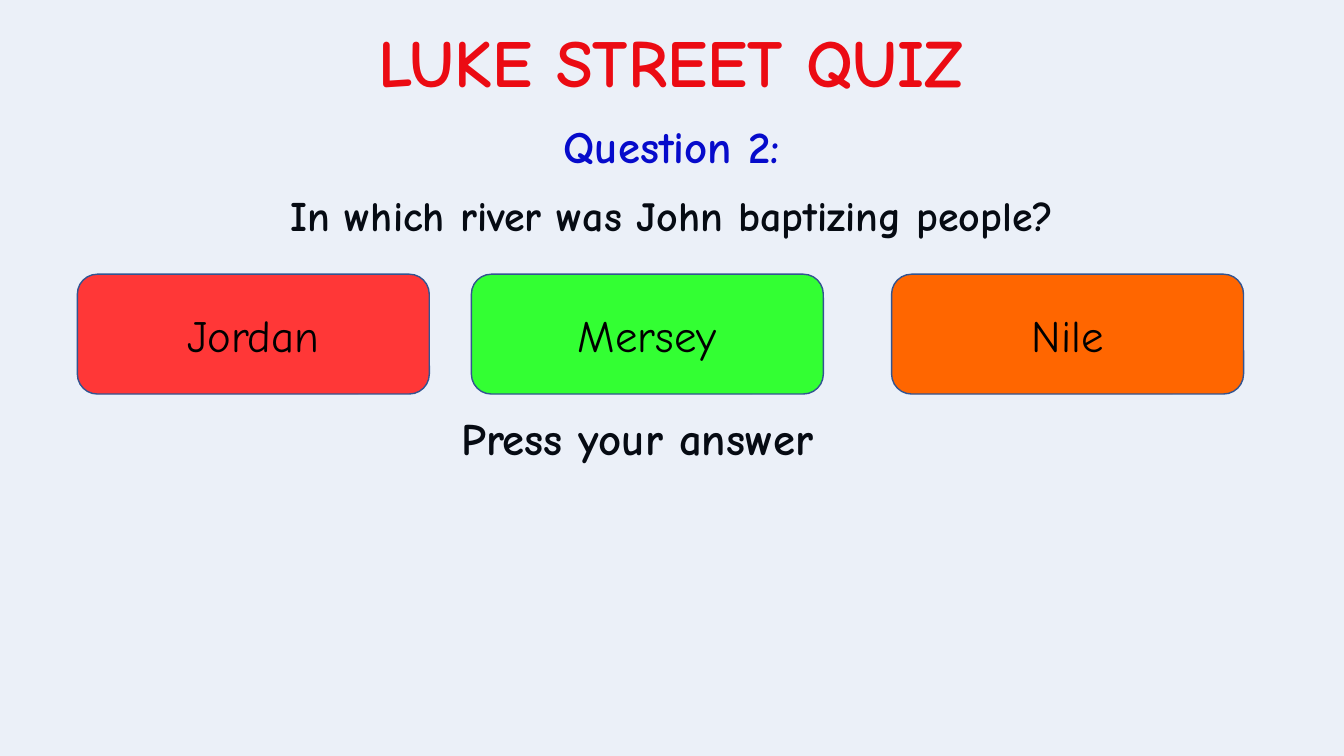
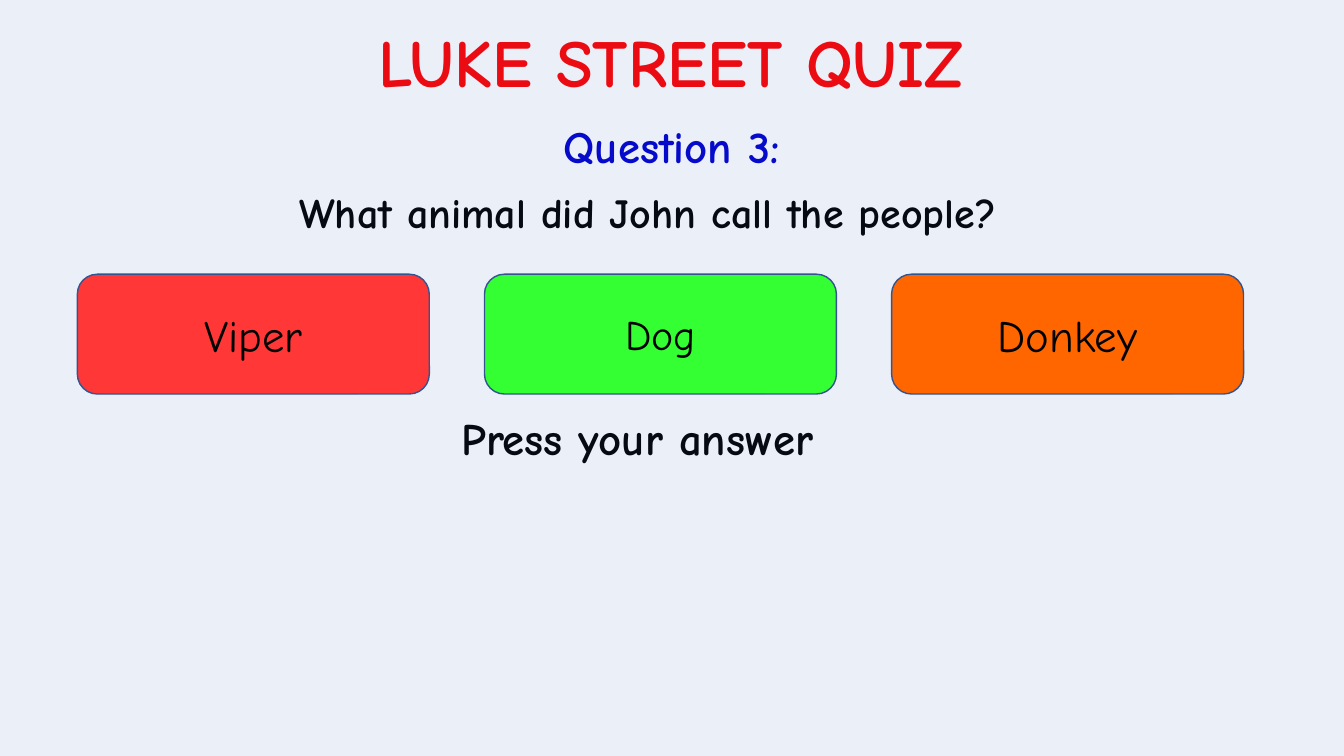
from lxml import etree
from pptx import Presentation
from pptx.dml.color import RGBColor
from pptx.enum.shapes import MSO_SHAPE as Shape
from pptx.enum.text import MSO_ANCHOR as Anchor, MSO_AUTO_SIZE as AutoSize, PP_ALIGN as Align
from pptx.oxml.ns import qn
from pptx.util import Cm, Pt

FONT = "Comic Neue"
BLACK = RGBColor(0, 0, 0)
TITLE_RED = RGBColor(0xFF, 0, 0)
LABEL_BLUE = RGBColor(0, 0, 0xCC)
WASH_BLUE = RGBColor(0x44, 0x72, 0xC4)
BORDER_BLUE = RGBColor(0x32, 0x54, 0x91)
ANSWER_FILLS = [
    RGBColor(0xFF, 0x37, 0x37),
    RGBColor(0x33, 0xFF, 0x33),
    RGBColor(0xFF, 0x66, 0),
]
WASH_OPACITY = 10

TITLE = "LUKE STREET QUIZ"
PROMPT = "Press your answer"
QUESTIONS = [
    {
        "label": "Question 2:",
        "question": "In which river was John baptizing people?",
        "box": (4.95, 4.5, 23.98, 3.02),
        "line_spacing": Pt(40),
        "answers": [("Jordan", 32), ("Mersey", 32), ("Nile", 32)],
        "middle_shift": -0.33,
    },
    {
        "label": "Question 3:",
        "question": "What animal did John call the people?",
        "box": (1.32, 4.78, 30.02, 1.83),
        "line_spacing": Pt(30),
        "answers": [("Viper", 32), ("Dog", 30), ("Donkey", 32)],
        "middle_shift": 0,
    },
]

SLIDE_WIDTH, SLIDE_HEIGHT = 33.87, 19.05
TITLE_BOX = (7.92, 0.38, 17.98, 2.31)
LABEL_BOX = (11.33, 2.87, 11.2, 1.63)
PROMPT_BOX = (11.38, 10.39, 17.09, 1.83)
ANSWER_LEFT, ANSWER_TOP = 1.95, 6.91
ANSWER_WIDTH, ANSWER_HEIGHT = 8.87, 3.02
ANSWER_STEP = 10.26


def write(shape, text, size, color, bold=True, align=Align.CENTER, anchor=Anchor.TOP):
    frame = shape.text_frame
    frame.text = text
    frame.word_wrap = True
    frame.auto_size = AutoSize.NONE
    frame.vertical_anchor = anchor
    paragraph = frame.paragraphs[0]
    paragraph.alignment = align
    font = paragraph.runs[0].font
    font.name, font.size, font.bold = FONT, Pt(size), bold
    font.color.rgb = color
    return paragraph


def add_text(slide, box, text, size, color, align=Align.CENTER):
    shape = slide.shapes.add_textbox(*map(Cm, box))
    return write(shape, text, size, color, align=align)


def add_filled(slide, kind, box, color):
    shape = slide.shapes.add_shape(kind, *map(Cm, box))
    shape.shadow.inherit = False
    shape.fill.solid()
    shape.fill.fore_color.rgb = color
    return shape


def add_title(slide):
    title = slide.shapes.title
    title.left, title.top, title.width, title.height = map(Cm, TITLE_BOX)
    write(title, TITLE, 48, TITLE_RED)
    title.text_frame.word_wrap = False


def add_wash(slide):
    wash = add_filled(slide, Shape.RECTANGLE, (0, 0, SLIDE_WIDTH, SLIDE_HEIGHT), WASH_BLUE)
    wash.line.fill.background()
    color = wash.fill._xPr.find(qn("a:solidFill"))[0]
    etree.SubElement(color, qn("a:alpha")).set("val", str(WASH_OPACITY * 1000))


def add_answers(slide, answers, middle_shift):
    for index, ((text, size), fill) in enumerate(zip(answers, ANSWER_FILLS)):
        left = ANSWER_LEFT + index * ANSWER_STEP + (middle_shift if index == 1 else 0)
        box = (left, ANSWER_TOP, ANSWER_WIDTH, ANSWER_HEIGHT)
        button = add_filled(slide, Shape.ROUNDED_RECTANGLE, box, fill)
        button.line.color.rgb = BORDER_BLUE
        button.line.width = Pt(1)
        write(button, text, size, BLACK, bold=False, anchor=Anchor.MIDDLE)


def add_question_slide(presentation, item):
    slide = presentation.slides.add_slide(presentation.slide_layouts[5])
    add_title(slide)
    add_text(slide, LABEL_BOX, item["label"], 32, LABEL_BLUE)
    question = add_text(slide, item["box"], item["question"], 30, BLACK)
    question.line_spacing = item["line_spacing"]
    question.space_before = Pt(10)
    prompt = add_text(slide, PROMPT_BOX, PROMPT, 32, BLACK, Align.LEFT)
    prompt.line_spacing = 0.9
    prompt.space_before = Pt(7.5)
    add_wash(slide)
    add_answers(slide, item["answers"], item["middle_shift"])


def main():
    presentation = Presentation()
    presentation.slide_width = Cm(SLIDE_WIDTH)
    presentation.slide_height = Cm(SLIDE_HEIGHT)
    for item in QUESTIONS:
        add_question_slide(presentation, item)
    presentation.save("out.pptx")


if __name__ == "__main__":
    main()
